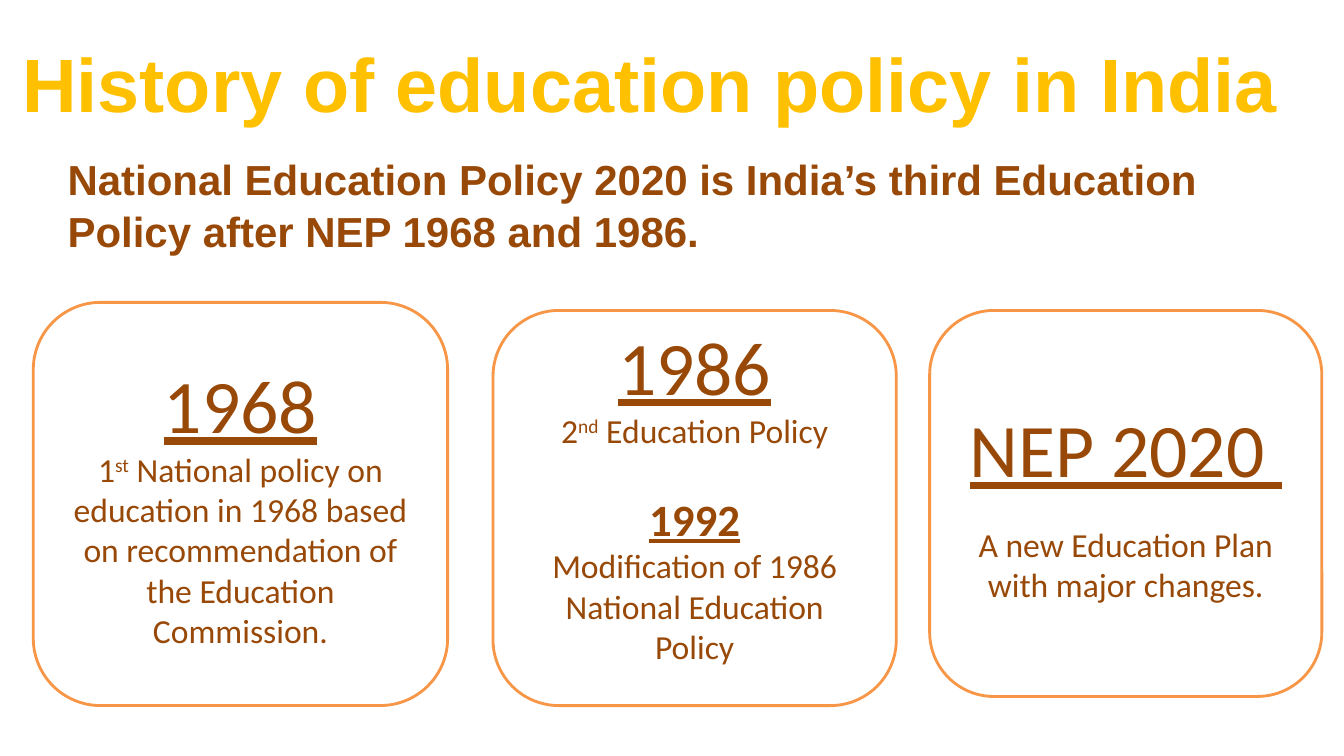
from dataclasses import dataclass
from lxml.etree import SubElement
from pptx import Presentation
from pptx.dml.color import RGBColor as Rgb
from pptx.enum.shapes import MSO_SHAPE as Kind
from pptx.enum.text import MSO_ANCHOR as Anchor, MSO_AUTO_SIZE as Fit, PP_ALIGN as Align
from pptx.oxml.ns import qn
from pptx.util import Inches, Pt


@dataclass(frozen=True)
class Theme:
    gold: str = "FFC000"
    brown: str = "984807"
    edge: str = "F79646"
    white: str = "FFFFFF"
    head: str = "Arial"
    text: str = "Calibri"
    huge: int = 54
    year: int = 32
    lead: int = 30
    small: int = 24


look = Theme()
title = "History of education policy in India"
lead = "National Education Policy 2020 is India’s third Education Policy after NEP 1968 and 1986."
big = dict(size=look.huge, under=True)
mid = dict(size=look.year, under=True, bold=True, before=29.3)
cards = [
    dict(box=(0.33, 3, 4.11, 4), foot=0.05, lines=[
        (["1968"], big),
        (["1", "^st", " National policy on education in 1968 based on "
          "recommendation of the Education Commission."], {}),
    ]),
    dict(box=(4.89, 3.08, 4, 3.92), foot=0.35, lines=[
        (["1986"], big),
        (["2", "^nd", " Education Policy"], {}),
        (["1992"], mid),
        (["Modification of 1986 National Education Policy"], {}),
    ]),
    dict(box=(9.22, 3.08, 3.89, 3.83), foot=0.05, lines=[
        (["NEP 2020 "], big),
        (["A new Education Plan with major changes."], dict(before=22)),
    ]),
]


def write(para, parts, size=look.small, font=look.text, color=look.brown,
          bold=False, under=False, align=Align.CENTER, before=0, pitch=1.0):
    para.alignment = align
    para.space_before = Pt(before)
    para.line_spacing = pitch
    for part in parts:
        run = para.add_run()
        run.text = part.lstrip("^")
        face = run.font
        face.name, face.size = font, Pt(size)
        face.bold, face.underline = bold, under
        face.color.rgb = Rgb.from_string(color)
        if part.startswith("^"):
            run._r.get_or_add_rPr().set("baseline", "30000")


def place(holder, box, anchor, fit):
    holder.left, holder.top, holder.width, holder.height = map(Inches, box)
    frame = holder.text_frame
    frame.margin_left = frame.margin_right = 0
    frame.margin_top = frame.margin_bottom = 0
    frame.word_wrap = True
    frame.vertical_anchor = anchor
    frame.auto_size = fit
    return frame.paragraphs[0]


def draw(slide, card):
    shape = slide.shapes.add_shape(Kind.ROUNDED_RECTANGLE, *map(Inches, card["box"]))
    shape.shadow.inherit = False
    shape.fill.solid()
    shape.fill.fore_color.rgb = Rgb.from_string(look.white)
    shape.line.color.rgb = Rgb.from_string(look.edge)
    shape.line.width = Pt(2)
    frame = shape.text_frame
    frame.word_wrap = True
    frame.vertical_anchor = Anchor.MIDDLE
    frame.margin_bottom = Inches(card["foot"])
    for i, (parts, form) in enumerate(card["lines"]):
        para = frame.add_paragraph() if i else frame.paragraphs[0]
        write(para, parts, **form)


def main():
    deck = Presentation()
    deck.slide_width, deck.slide_height = Inches(13.33), Inches(7.5)
    slide = deck.slides.add_slide(deck.slide_layouts[1])
    para = place(slide.shapes.title, (0.22, 0.3, 12.67, 1.03), Anchor.MIDDLE, Fit.NONE)
    write(para, [title], size=look.huge, font=look.head, color=look.gold,
          bold=True, align=Align.LEFT)
    para = place(slide.placeholders[1], (0.67, 1.5, 12, 1.17), Anchor.TOP, Fit.SHAPE_TO_FIT_TEXT)
    write(para, [lead], size=look.lead, font=look.head, bold=True,
          align=Align.LEFT, before=2, pitch=1.04)
    form = para._p.get_or_add_pPr()
    form.set("marL", "0")
    form.set("indent", "0")
    SubElement(form, qn("a:buNone"))
    for card in cards:
        draw(slide, card)
    deck.save("out.pptx")


if __name__ == "__main__":
    main()
